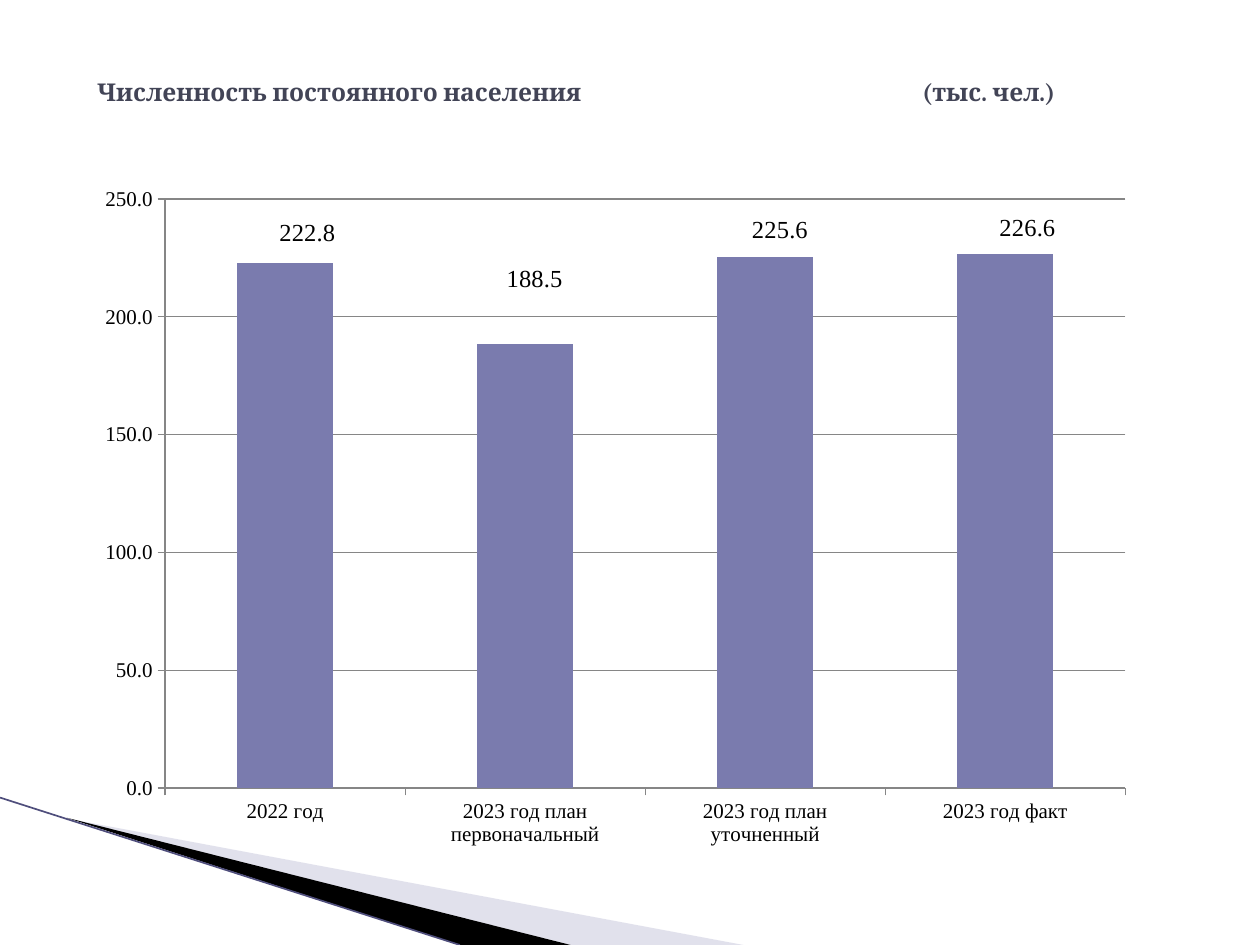
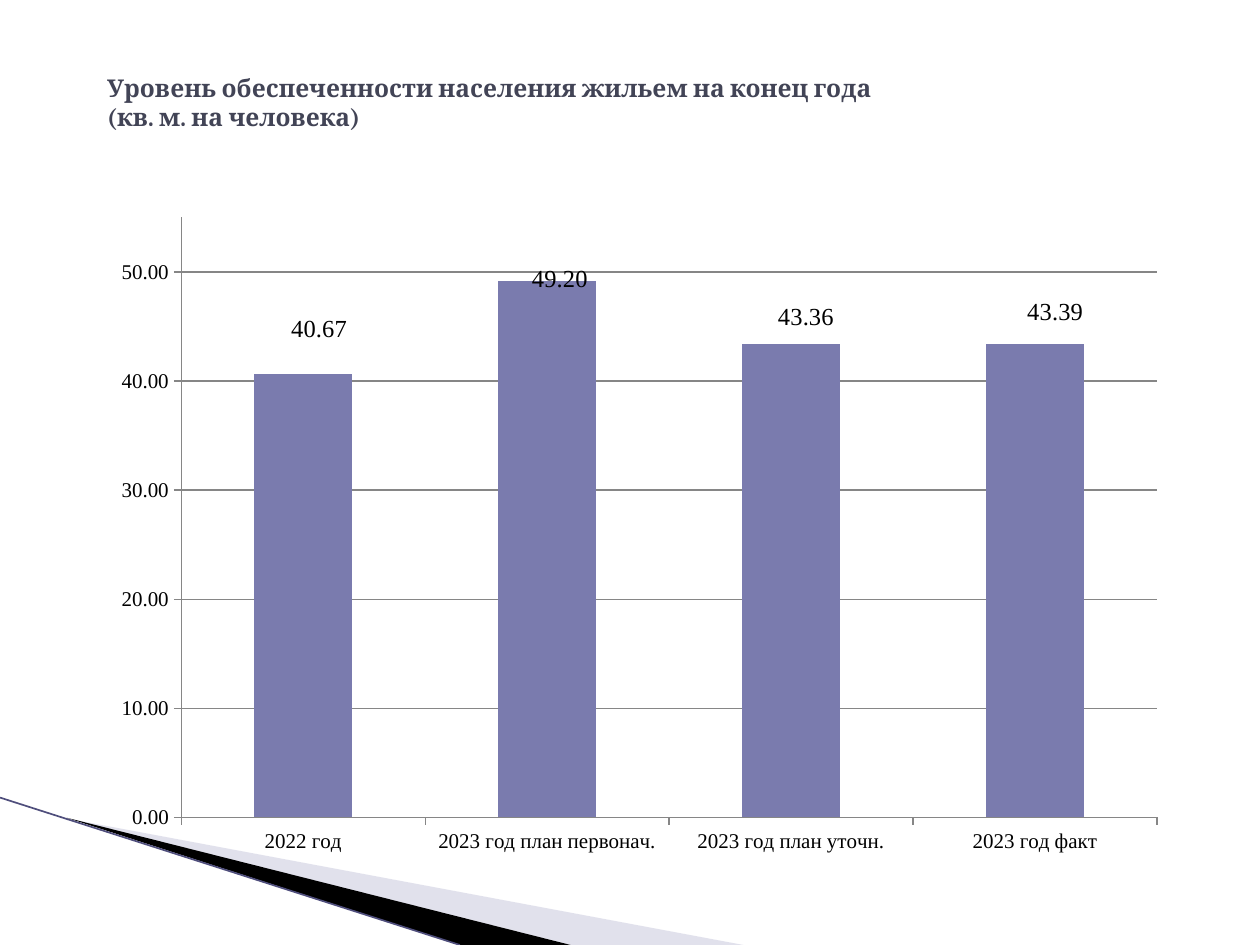
from lxml.etree import SubElement
from pptx import Presentation
from pptx.chart.data import CategoryChartData
from pptx.dml.color import RGBColor
from pptx.enum.chart import XL_CHART_TYPE as ChartType, XL_LABEL_POSITION as LabelPosition
from pptx.enum.chart import XL_TICK_MARK as TickMark
from pptx.enum.shapes import MSO_CONNECTOR as Connector
from pptx.enum.text import MSO_ANCHOR as Anchor, MSO_AUTO_SIZE as AutoSize, PP_ALIGN as Align
from pptx.oxml import parse_xml
from pptx.oxml.ns import nsdecls, qn
from pptx.util import Inches, Pt

COLORS = {
    "title": "424456",
    "bar": "7A7BAE",
    "axis": "868686",
    "text": "000000",
    "light_wedge": "B6B6D1",
    "dark_wedge": "000000",
    "edge": "4F4E7C",
}
TITLE_FONT = "Cambria"
CHART_FONT = "Times New Roman"


def color(name):
    """Return a palette colour."""
    return RGBColor.from_string(COLORS[name])


def style_font(font, name, size, color_name, bold=False):
    """Set the face, size, colour and weight of a font."""
    font.name, font.size, font.bold = name, Pt(size), bold
    font.color.rgb = color(color_name)


def add_wedge(slide, points, color_name, opacity=100):
    """Draw a filled outline through points given in inches."""
    start, *rest = [(Inches(x), Inches(y)) for x, y in points]
    builder = slide.shapes.build_freeform(*start)
    builder.add_line_segments(rest)
    wedge = builder.convert_to_shape()
    wedge.shadow.inherit = False
    wedge.fill.solid()
    wedge.fill.fore_color.rgb = color(color_name)
    wedge.line.fill.background()
    if opacity < 100:
        tint = wedge.element.find(".//" + qn("a:srgbClr"))
        SubElement(tint, qn("a:alpha"), val=str(opacity * 1000))
    return wedge


def add_edge(slide, start, end):
    """Draw the thin line along the wedges."""
    points = [Inches(value) for value in (*start, *end)]
    edge = slide.shapes.add_connector(Connector.STRAIGHT, *points)
    edge.line.color.rgb = color("edge")
    edge.line.width = Pt(0.95)
    SubElement(edge.element.spPr, qn("a:effectLst"))
    return edge


def decorate_master(deck, slide):
    """Draw the corner decoration and hand it to the slide master."""
    decoration = [
        add_wedge(slide, [(0.55, 6.5), (5.9, 7.5), (4.53, 7.5)], "light_wedge", 40),
        add_wedge(slide, [(0.53, 6.49), (4.53, 7.5), (3.65, 7.5)], "dark_wedge"),
        add_edge(slide, (0, 6.33), (3.65, 7.5)),
    ]
    for shape in decoration:
        deck.slide_master.shapes.element.append(shape.element)


def set_title(slide, text, place, tab=None):
    """Fill and place the title, with an optional tab stop in inches."""
    title = slide.shapes.title
    title.left, title.top, title.width, title.height = map(Inches, place)
    frame = title.text_frame
    frame.text = text
    frame.auto_size = AutoSize.NONE
    frame.vertical_anchor = Anchor.MIDDLE
    paragraph = frame.paragraphs[0]
    paragraph.alignment = Align.LEFT
    if tab:
        stops = SubElement(paragraph._p.get_or_add_pPr(), qn("a:tabLst"))
        SubElement(stops, qn("a:tab"), pos=str(Inches(tab)), algn="l")
    style_font(paragraph.font, TITLE_FONT, 14, "title", bold=True)


def manual_layout(x, y, extra=""):
    """Build a chart layout element."""
    return parse_xml(
        f'<c:layout {nsdecls("c")}><c:manualLayout>{extra}'
        f'<c:x val="{x}"/><c:y val="{y}"/></c:manualLayout></c:layout>'
    )


def place_plot(chart, x, y, width, height):
    """Fix the inner plot area as fractions of the chart."""
    layout = manual_layout(
        x, y, '<c:layoutTarget val="inner"/><c:xMode val="edge"/><c:yMode val="edge"/>')
    for tag, value in (("c:w", width), ("c:h", height)):
        SubElement(layout[0], qn(tag), val=str(value))
    plot_area = chart._chartSpace.chart.plotArea
    for old in plot_area.findall(qn("c:layout")):
        plot_area.remove(old)
    plot_area.insert(0, layout)


def style_axes(chart, number_format, top, step):
    """Format both axes and the gridlines."""
    for axis in (chart.category_axis, chart.value_axis):
        axis.major_tick_mark = TickMark.OUTSIDE
        axis.format.line.color.rgb = color("axis")
        style_font(axis.tick_labels.font, CHART_FONT, 12, "text")
    values = chart.value_axis
    values.minimum_scale, values.maximum_scale, values.major_unit = 0, top, step
    values.major_gridlines.format.line.color.rgb = color("axis")
    values.tick_labels.number_format = number_format
    values.tick_labels.number_format_is_linked = False


def style_labels(plot, number_format, offsets):
    """Show values without leader lines, each shifted from mid-column."""
    series = plot.series[0]
    labels = series.data_labels
    labels.show_value = True
    labels.number_format = number_format
    labels.number_format_is_linked = False
    style_font(labels.font, CHART_FONT, 14, "text")
    for leader in labels._element.findall(qn("c:showLeaderLines")):
        leader.set("val", "0")
    for index, offset in enumerate(offsets):
        label = series.points[index].data_label
        style_font(label.font, CHART_FONT, 14, "text")
        label.position = LabelPosition.CENTER
        element = labels._element.findall(qn("c:dLbl"))[index]
        element.insert(1, manual_layout(*offset))


def add_column_chart(slide, place, values, number_format, top, step, plot_place, offsets):
    """Add a column chart from a dict of categories and values."""
    data = CategoryChartData(number_format=number_format)
    data.categories = list(values)
    data.add_series("Series 1", list(values.values()))
    chart = slide.shapes.add_chart(
        ChartType.COLUMN_STACKED, *map(Inches, place), data).chart
    chart.has_legend = chart.has_title = False
    style_font(chart.font, CHART_FONT, 12, "text")
    plot = chart.plots[0]
    plot.gap_width, plot.overlap, plot.vary_by_categories = 150, 100, False
    fill = plot.series[0].format.fill
    fill.solid()
    fill.fore_color.rgb = color("bar")
    style_axes(chart, number_format, top, step)
    style_labels(plot, number_format, offsets)
    place_plot(chart, *plot_place)


def main():
    """Build the population and housing slides."""
    deck = Presentation()
    deck.slide_width, deck.slide_height = Inches(10), Inches(7.5)
    title_only = deck.slide_layouts[5]

    population = deck.slides.add_slide(title_only)
    decorate_master(deck, population)
    set_title(population, "Численность постоянного населения\t(тыс. чел.)",
              (0.67, 0.44, 8.35, 0.58), tab=6.55)
    add_column_chart(
        population, (0.67, 1.39, 8.43, 5.43),
        {"2022 год": 222.8, "2023 год план первоначальный": 188.5,
         "2023 год план уточненный": 225.6, "2023 год факт": 226.6},
        "#,##0.0", 250, 50, (0.076, 0.035, 0.904, 0.861),
        [(0.021, -0.428), (0.009, -0.42), (0.014, -0.428), (0.021, -0.429)])

    housing = deck.slides.add_slide(title_only)
    set_title(housing,
              "Уровень обеспеченности населения жильем на конец года\v(кв. м. на человека)",
              (0.75, 0.52, 6.75, 0.58))
    add_column_chart(
        housing, (0.75, 1.55, 8.5, 5.35),
        {"2022 год": 40.67, "2023 год план первонач.": 49.2,
         "2023 год план уточн.": 43.36, "2023 год факт": 43.39},
        "#,##0.00", 55, 10, (0.081, 0.033, 0.911, 0.89),
        [(0.015, -0.396), (0.012, -0.4), (0.014, -0.391), (0.019, -0.398)])

    deck.save("out.pptx")


if __name__ == "__main__":
    main()
